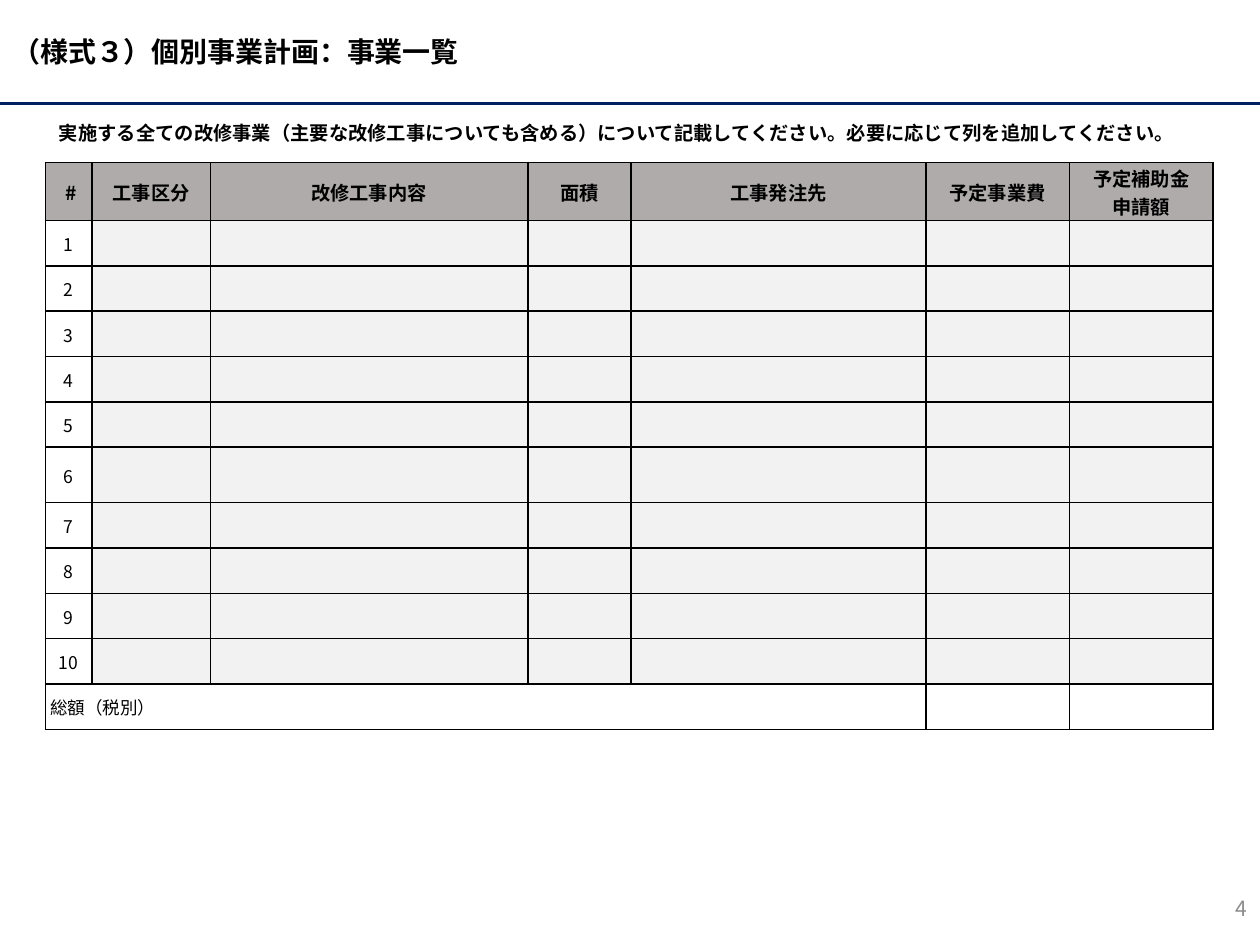
from dataclasses import dataclass

from lxml import etree
from pptx import Presentation
from pptx.dml.color import RGBColor
from pptx.enum.shapes import MSO_CONNECTOR
from pptx.enum.text import MSO_ANCHOR as Anchor, MSO_AUTO_SIZE as AutoSize, PP_ALIGN as Align
from pptx.oxml.ns import qn
from pptx.util import Inches, Pt

FONT = "Noto Sans CJK JP"
BLACK, WHITE, NAVY, PAGE_GRAY = "000000", "FFFFFF", "002060", "8C8C8C"
HEADER_GRAY, INPUT_GRAY = "AFABAB", "F2F2F2"
HEADER_MARGIN, BODY_MARGIN = 0.01, 0.04


@dataclass(frozen=True)
class TextStyle:
    size: float
    bold: bool = False
    color: str = BLACK
    align: Align = Align.LEFT


@dataclass(frozen=True)
class Label:
    text: str
    left: float
    top: float
    width: float
    height: float
    style: TextStyle
    anchor: Anchor = Anchor.MIDDLE
    auto_size: AutoSize = AutoSize.NONE


@dataclass(frozen=True)
class Column:
    heading: str
    width: float


HEADER = TextStyle(11, bold=True, align=Align.CENTER)
HEADER_LEFT = TextStyle(11, bold=True)
NUMBER = TextStyle(10, align=Align.CENTER)
TOTAL = TextStyle(10)

LABELS = [
    Label("（様式３）個別事業計画：事業一覧", 0, 0, 10, 0.82, TextStyle(16, bold=True)),
    Label("実施する全ての改修事業（主要な改修工事についても含める）について記載してください。"
          "必要に応じて列を追加してください。",
          0.37, 0.91, 9.27, 0.29, TextStyle(11, bold=True),
          Anchor.TOP, AutoSize.SHAPE_TO_FIT_TEXT),
    Label("4", 7.75, 7.01, 2.25, 0.4, TextStyle(12, color=PAGE_GRAY, align=Align.RIGHT)),
]

COLUMNS = [
    Column("　#", 0.37),
    Column("工事区分", 0.94),
    Column("改修工事内容", 2.52),
    Column("面積", 0.82),
    Column("工事発注先", 2.34),
    Column("予定事業費", 1.14),
    Column("予定補助金\n申請額", 1.14),
]
PROJECT_COUNT = 10
TOTAL_ROW = PROJECT_COUNT + 1
TOTAL_SPAN = 5
ROW_HEIGHT = 0.36
SPECIAL_HEIGHTS = {0: 0.46, 6: 0.44}


def rgb(value: str) -> RGBColor:
    return RGBColor.from_string(value)


def write_text(frame, text: str, style: TextStyle) -> None:
    frame.text = text
    for paragraph in frame.paragraphs:
        paragraph.alignment = style.align
        font = paragraph.font
        font.size, font.bold, font.name = Pt(style.size), style.bold, FONT
        font.color.rgb = rgb(style.color)
        # East Asian text needs its own typeface entry
        defaults = paragraph._p.pPr.find(qn("a:defRPr"))
        etree.SubElement(defaults, qn("a:ea"), typeface=FONT)
        if not text:
            # An empty cell takes its line height from the end mark
            etree.SubElement(paragraph._p, qn("a:endParaRPr"), sz=str(int(style.size * 100)))


def add_label(slide, label: Label) -> None:
    box = slide.shapes.add_textbox(Inches(label.left), Inches(label.top),
                                   Inches(label.width), Inches(label.height))
    frame = box.text_frame
    frame.word_wrap = True
    frame.auto_size = label.auto_size
    frame.vertical_anchor = label.anchor
    write_text(frame, label.text, label.style)


def add_rule(slide, top: float) -> None:
    rule = slide.shapes.add_connector(MSO_CONNECTOR.STRAIGHT, 0, Inches(top),
                                      Inches(10), Inches(top))
    rule.line.color.rgb = rgb(NAVY)
    rule.line.width = Pt(1.5)
    etree.SubElement(rule._element.spPr, qn("a:effectLst"))


def set_borders(cell) -> None:
    properties = cell._tc.get_or_add_tcPr()
    for side in ("lnL", "lnR", "lnT", "lnB"):
        line = etree.SubElement(properties, qn(f"a:{side}"), w=str(Pt(1)))
        fill = etree.SubElement(line, qn("a:solidFill"))
        etree.SubElement(fill, qn("a:srgbClr"), val=BLACK)


def format_cell(cell, text: str, style: TextStyle, fill: str, margin: float) -> None:
    set_borders(cell)
    cell.fill.solid()
    cell.fill.fore_color.rgb = rgb(fill)
    cell.vertical_anchor = Anchor.MIDDLE
    cell.margin_left = cell.margin_right = Inches(margin)
    cell.margin_top, cell.margin_bottom = Inches(0.01), 0
    write_text(cell.text_frame, text, style)


def add_project_table(slide) -> None:
    heights = [SPECIAL_HEIGHTS.get(row, ROW_HEIGHT) for row in range(TOTAL_ROW + 1)]
    width = sum(column.width for column in COLUMNS)
    table = slide.shapes.add_table(len(heights), len(COLUMNS), Inches(0.36), Inches(1.29),
                                   Inches(width), Inches(sum(heights))).table
    for row, height in zip(table.rows, heights):
        row.height = Inches(height)

    for index, column in enumerate(COLUMNS):
        table.columns[index].width = Inches(column.width)
        # Heading
        heading_style = HEADER if index else HEADER_LEFT
        format_cell(table.cell(0, index), column.heading, heading_style,
                    HEADER_GRAY, HEADER_MARGIN)
        # Numbered projects
        for number in range(1, PROJECT_COUNT + 1):
            format_cell(table.cell(number, index), "" if index else str(number), NUMBER,
                        INPUT_GRAY if index else WHITE, BODY_MARGIN)
        # Total
        format_cell(table.cell(TOTAL_ROW, index), "" if index else "総額（税別）", TOTAL,
                    WHITE, BODY_MARGIN)
    table.cell(TOTAL_ROW, 0).merge(table.cell(TOTAL_ROW, TOTAL_SPAN - 1))


def main() -> None:
    presentation = Presentation()
    presentation.slide_width, presentation.slide_height = Inches(10), Inches(7.5)
    slide = presentation.slides.add_slide(presentation.slide_layouts[6])
    add_rule(slide, 0.82)
    add_project_table(slide)
    for label in LABELS:
        add_label(slide, label)
    presentation.save("out.pptx")


if __name__ == "__main__":
    main()
